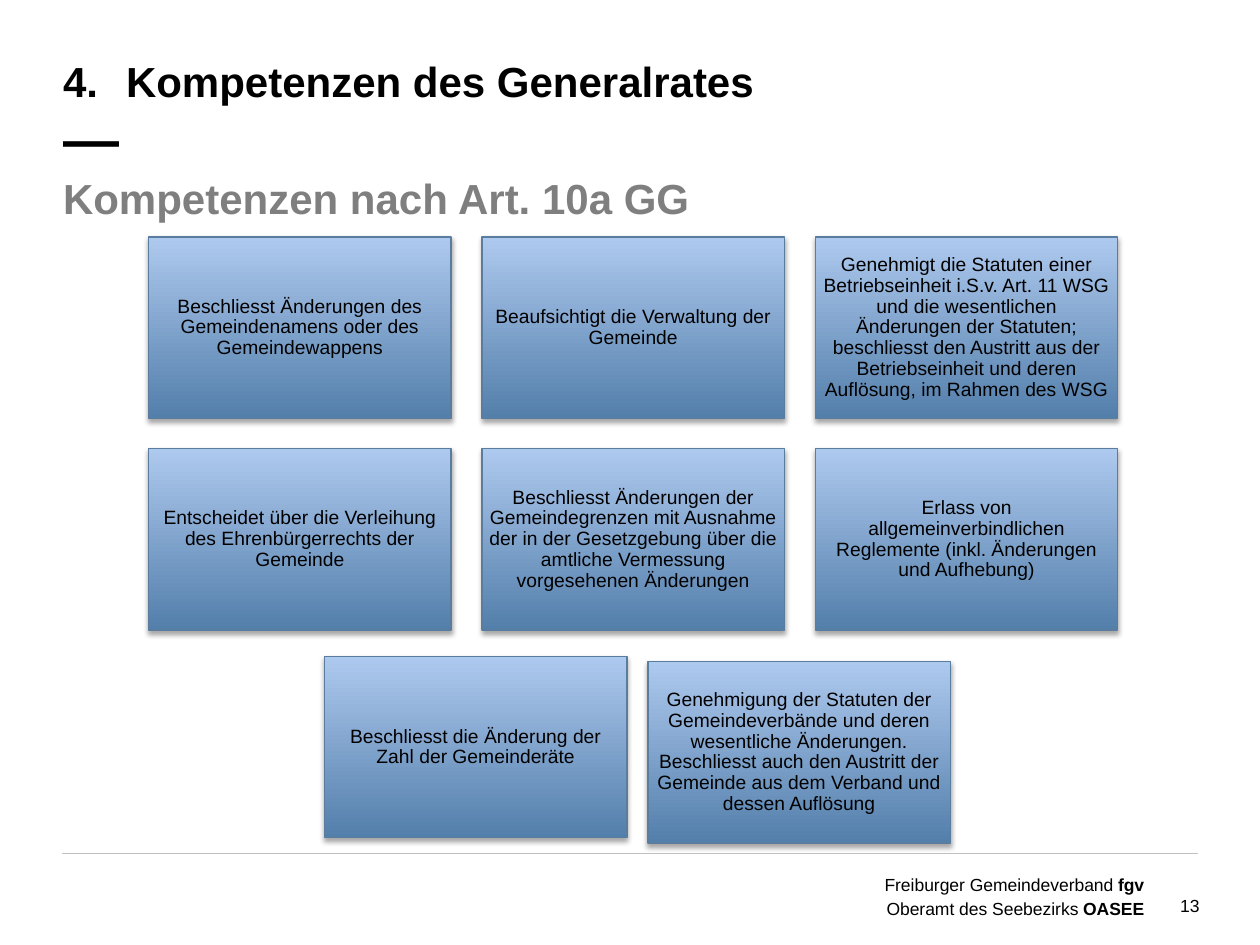
from pptx import Presentation
from pptx.dml.color import RGBColor
from pptx.enum.shapes import MSO_CONNECTOR, MSO_SHAPE
from pptx.enum.text import MSO_ANCHOR, PP_ALIGN
from pptx.oxml import parse_xml
from pptx.oxml.ns import nsdecls, qn
from pptx.util import Pt

BLACK = RGBColor(0x00, 0x00, 0x00)
GREY = RGBColor(0x7F, 0x7F, 0x7F)
RULE = RGBColor(0xC0, 0xC0, 0xC0)
BOX_DARK = RGBColor(0x53, 0x7F, 0xAB)
BOX_LIGHT = RGBColor(0xAE, 0xC9, 0xEE)
BOX_LINE = RGBColor(0x59, 0x7C, 0x9F)

BOX_W, BOX_H = 172.8, 103.7
GRID_LEFT, GRID_TOP = 85, 135.4
COL_STEP, ROW_STEP = 190.5, 121

GRID_TEXTS = [
    "Beschliesst Änderungen des Gemeindenamens oder des Gemeindewappens",
    "Beaufsichtigt die Verwaltung der Gemeinde",
    "Genehmigt die Statuten einer Betriebseinheit i.S.v. Art. 11 WSG und die "
    "wesentlichen Änderungen der Statuten; beschliesst den Austritt aus der "
    "Betriebseinheit und deren Auflösung, im Rahmen des WSG",
    "Entscheidet über die Verleihung des Ehrenbürgerrechts der Gemeinde",
    "Beschliesst Änderungen der Gemeindegrenzen mit Ausnahme der in der "
    "Gesetzgebung über die amtliche Vermessung vorgesehenen Änderungen",
    "Erlass von allgemeinverbindlichen Reglemente (inkl. Änderungen und Aufhebung)",
]
BOTTOM_BOXES = [
    (185.5, 375.1, "Beschliesst die Änderung der Zahl der Gemeinderäte"),
    (370.3, 378, "Genehmigung der Statuten der Gemeindeverbände und deren "
     "wesentliche Änderungen. Beschliesst auch den Austritt der Gemeinde aus "
     "dem Verband und dessen Auflösung"),
]


def add_run(p, text, size, color=BLACK, bold=False):
    r = p.add_run()
    r.text = text
    r.font.name = "Arial"
    r.font.size = Pt(size)
    r.font.bold = bold
    r.font.color.rgb = color


def set_margins(tf, margin):
    tf.word_wrap = True
    tf.margin_left = tf.margin_right = Pt(margin)
    tf.margin_top = tf.margin_bottom = Pt(margin)


def add_text_frame(s, left, top, width, height):
    tf = s.shapes.add_textbox(Pt(left), Pt(top), Pt(width), Pt(height)).text_frame
    set_margins(tf, 0)
    return tf


def add_box(s, left, top, text):
    sp = s.shapes.add_shape(MSO_SHAPE.RECTANGLE, Pt(left), Pt(top), Pt(BOX_W), Pt(BOX_H))
    sp.fill.gradient()
    sp.fill.gradient_angle = 90
    for stop, position, color in zip(sp.fill.gradient_stops, (0, 1), (BOX_DARK, BOX_LIGHT)):
        stop.position = position
        stop.color.rgb = color
    sp.line.color.rgb = BOX_LINE
    sp.line.width = Pt(0.75)

    # Soft shadow below the box
    sp.shadow.inherit = False
    effects = sp._element.spPr.find(qn("a:effectLst"))
    effects.append(parse_xml(
        f'<a:outerShdw {nsdecls("a")} blurRad="{Pt(3.1)}" dist="{Pt(1.8)}" '
        'dir="5400000" rotWithShape="0"><a:srgbClr val="000000">'
        '<a:alpha val="35000"/></a:srgbClr></a:outerShdw>'))

    tf = sp.text_frame
    set_margins(tf, 3.6)
    tf.vertical_anchor = MSO_ANCHOR.MIDDLE
    p = tf.paragraphs[0]
    p.alignment = PP_ALIGN.CENTER
    p.line_spacing = 0.9
    add_run(p, text, 11)


def add_title(s):
    p = add_text_frame(s, 36, 23.8, 648.7, 74.9).paragraphs[0]
    p.line_spacing = Pt(37)
    p._p.get_or_add_pPr().append(parse_xml(
        f'<a:tabLst {nsdecls("a")}><a:tab pos="{Pt(36)}" algn="l"/></a:tabLst>'))
    add_run(p, "4.\tKompetenzen des Generalrates", 24, bold=True)
    p.add_line_break()
    add_run(p, "—", 32, bold=True)


def add_footer(s):
    rule = s.shapes.add_connector(
        MSO_CONNECTOR.STRAIGHT, Pt(35.5), Pt(487.5), Pt(684.5), Pt(487.5))
    rule.line.color.rgb = RULE
    rule.line.width = Pt(0.25)
    rule._element.spPr.append(parse_xml(f'<a:effectLst {nsdecls("a")}/>'))

    tf = add_text_frame(s, 497.5, 498.2, 156.3, 25.2)
    lines = [("Freiburger Gemeindeverband ", "fgv"), ("Oberamt des Seebezirks ", "OASEE")]
    for i, (name, short) in enumerate(lines):
        p = tf.add_paragraph() if i else tf.paragraphs[0]
        p.alignment = PP_ALIGN.RIGHT
        p.line_spacing = Pt(13.4)
        add_run(p, name, 10)
        add_run(p, short, 10, bold=True)

    # Page number
    p = add_text_frame(s, 653.8, 511.2, 31.7, 12.2).paragraphs[0]
    p.alignment = PP_ALIGN.RIGHT
    add_run(p, "13", 10)


def main():
    prs = Presentation()
    prs.slide_width, prs.slide_height = Pt(720), Pt(540)
    s = prs.slides.add_slide(prs.slide_layouts[6])

    add_footer(s)
    add_title(s)

    # Two full rows of three, then the two lower boxes
    for i, text in enumerate(GRID_TEXTS):
        row, col = divmod(i, 3)
        add_box(s, GRID_LEFT + col * COL_STEP, GRID_TOP + row * ROW_STEP, text)
    for left, top, text in BOTTOM_BOXES:
        add_box(s, left, top, text)

    # Subtitle
    p = add_text_frame(s, 36, 98.6, 648.7, 28.8).paragraphs[0]
    add_run(p, "Kompetenzen nach Art. 10a GG", 24, GREY, bold=True)

    prs.save("out.pptx")


if __name__ == "__main__":
    main()
